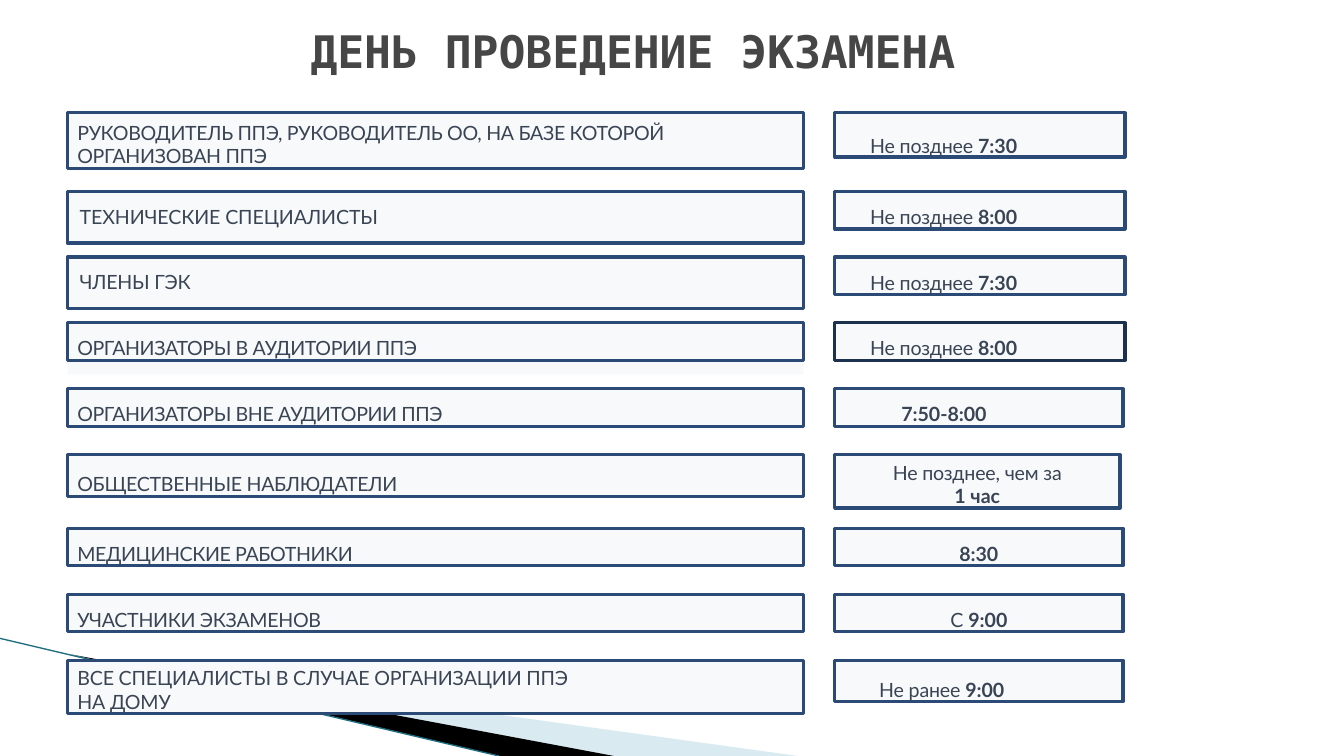
import pptx
import pptx.util
import pptx.dml.color
import pptx.enum.shapes
import pptx.enum.text
from pptx.oxml import parse_xml
from lxml import etree

Pt = pptx.util.Pt
Align = pptx.enum.text.PP_ALIGN
Anchor = pptx.enum.text.MSO_ANCHOR

NAVY, DARK_NAVY, PALE, INK = "2B4A76", "1C314E", "F8F9FA", "394454"
ROLE_LEFT, ROLE_WIDTH, TIME_LEFT = 48.2, 525.6, 596.2
ROW_TOPS = (80.6, 136.8, 183.6, 230.6, 277.7, 324.9, 377.3, 424.6, 471.6)

# text, height, left inset, top inset, letter spacing
ROLES = (
    ("РУКОВОДИТЕЛЬ ППЭ, РУКОВОДИТЕЛЬ ОО, НА БАЗЕ КОТОРОЙ ОРГАНИЗОВАН ППЭ", 39.6, 7.2, 5.6, -0.25),
    ("ТЕХНИЧЕСКИЕ СПЕЦИАЛИСТЫ", 36.8, 8.8, 9.4, -0.1),
    ("ЧЛЕНЫ ГЭК", 36.8, 8.8, 9.4, -0.2),
    ("ОРГАНИЗАТОРЫ В АУДИТОРИИ ППЭ", 26.8, 7.2, 9.6, -0.3),
    ("ОРГАНИЗАТОРЫ ВНЕ АУДИТОРИИ ППЭ", 26.8, 7.2, 9.6, -0.3),
    ("ОБЩЕСТВЕННЫЕ НАБЛЮДАТЕЛИ", 29.6, 7.2, 12.4, -0.25),
    ("МЕДИЦИНСКИЕ РАБОТНИКИ", 26.8, 7.2, 9.6, -0.3),
    ("УЧАСТНИКИ ЭКЗАМЕНОВ", 26.8, 7.2, 9.6, -0.25),
    ("ВСЕ СПЕЦИАЛИСТЫ В СЛУЧАЕ ОРГАНИЗАЦИИ ППЭ\nНА ДОМУ", 38, 7.2, 4.2, -0.15),
)

# plain text, bold text, width, height, left inset, top inset, alignment
TIMES = (
    ("Не позднее ", "7:30", 207.4, 31.6, 25.4, 15.4, Align.LEFT),
    ("Не позднее ", "8:00", 207.4, 26.8, 25.4, 9.6, Align.LEFT),
    ("Не позднее ", "7:30", 207.4, 26.8, 25.4, 9.6, Align.LEFT),
    ("Не позднее ", "8:00", 207.4, 26.8, 25.4, 9.6, Align.LEFT),
    ("", "7:50-8:00", 206, 26.8, 47.6, 9.6, Align.LEFT),
    ("Не позднее, чем за\n", "1 час", 203.8, 38, 0, 4.2, Align.CENTER),
    ("", "8:30", 206, 26.8, 0, 9.6, Align.CENTER),
    ("С ", "9:00", 206, 26.8, 0, 9.6, Align.CENTER),
    ("Не ранее ", "9:00", 206, 29.6, 31.8, 12.4, Align.LEFT),
)


def rgb(hex_color):
    """Turn a hex string into a colour."""
    return pptx.dml.color.RGBColor.from_string(hex_color)


def write(frame, text, size=14, font="Lato", color=INK, bold=False, spacing=0, align=Align.LEFT):
    """Append formatted text to a frame, with a new paragraph at each line break."""
    for number, line in enumerate(text.split("\n")):
        paragraph = frame.add_paragraph() if number else frame.paragraphs[-1]
        paragraph.alignment = align
        if not line:
            continue
        run = paragraph.add_run()
        run.text = line
        run.font.size = Pt(size)
        run.font.name = font
        run.font.bold = bold
        run.font.color.rgb = rgb(color)
        run.font._element.set("spc", str(round(spacing * 100)))


def set_frame(frame, left=0, top=0, anchor=Anchor.TOP):
    """Set the wrapping, insets and anchor of a text frame."""
    frame.word_wrap = True
    frame.auto_size = pptx.enum.text.MSO_AUTO_SIZE.NONE
    frame.vertical_anchor = anchor
    frame.margin_left, frame.margin_top = Pt(left), Pt(top)
    frame.margin_right = frame.margin_bottom = 0


def add_box(slide, left, top, width, height, line=None):
    """Add a pale rectangle, outlined when a line colour is given."""
    box = slide.shapes.add_shape(pptx.enum.shapes.MSO_SHAPE.RECTANGLE,
                                 Pt(left), Pt(top), Pt(width), Pt(height))
    box.shadow.inherit = False
    box.fill.solid()
    box.fill.fore_color.rgb = rgb(PALE)
    if line:
        box.line.color.rgb = rgb(line)
        box.line.width = Pt(2.25)
    else:
        box.line.fill.background()
    return box


def add_wedge(slide, corners, color):
    """Add a filled corner wedge without an outline."""
    start, *others = [(Pt(x), Pt(y)) for x, y in corners]
    builder = slide.shapes.build_freeform(*start)
    builder.add_line_segments(others, close=True)
    wedge = builder.convert_to_shape()
    wedge.shadow.inherit = False
    wedge.fill.solid()
    wedge.fill.fore_color.rgb = rgb(color)
    wedge.line.fill.background()


def add_corner(slide):
    """Add the sweeping decoration of the lower left corner."""
    add_wedge(slide, ((52.5, 468.5), (570, 540), (437.5, 540)), "D9EAF1")
    add_wedge(slide, ((51, 467.5), (438.5, 540), (357, 540)), "000000")
    edge = slide.shapes.add_connector(pptx.enum.shapes.MSO_CONNECTOR.STRAIGHT,
                                      0, Pt(456), Pt(356.5), Pt(540))
    edge.line.color.rgb = rgb("1F6E80")
    edge.line.width = Pt(0.95)
    properties = edge._element.spPr
    etree.SubElement(properties, pptx.oxml.ns.qn("a:effectLst"))


def add_title(slide, text):
    """Place and format the slide title."""
    title = slide.shapes.title
    title.left, title.top, title.width, title.height = Pt(38), Pt(16.6), Pt(828), Pt(39.6)
    set_frame(title.text_frame, anchor=Anchor.MIDDLE)
    write(title.text_frame, text, size=32, font="DejaVu Sans Mono", color="464646",
          bold=True, spacing=-0.1, align=Align.CENTER)


def add_role(slide, row_top, text, height, left, top, spacing):
    """Add the box that names who arrives."""
    box = add_box(slide, ROLE_LEFT, row_top, ROLE_WIDTH, height, NAVY)
    set_frame(box.text_frame, left, top)
    box.text_frame.margin_right = Pt(36)
    write(box.text_frame, text, spacing=spacing)


def add_time(slide, row_top, line, plain, bold, width, height, left, top, align):
    """Add the box that tells the arrival time."""
    box = add_box(slide, TIME_LEFT, row_top, width, height, line)
    set_frame(box.text_frame, left, top)
    write(box.text_frame, plain, spacing=-0.15, align=align)
    write(box.text_frame, bold, bold=True, spacing=-0.05, align=align)


def main():
    """Build and save the exam day slide."""
    deck = pptx.Presentation()
    deck.slide_width, deck.slide_height = Pt(960), Pt(540)
    slide = deck.slides.add_slide(deck.slide_layouts[5])
    add_corner(slide)
    add_title(slide, "ДЕНЬ ПРОВЕДЕНИЕ ЭКЗАМЕНА")
    add_box(slide, ROLE_LEFT, ROW_TOPS[3], ROLE_WIDTH, 36.8)
    for number, (row_top, role, time) in enumerate(zip(ROW_TOPS, ROLES, TIMES)):
        add_role(slide, row_top, *role)
        add_time(slide, row_top, DARK_NAVY if number == 3 else NAVY, *time)
    deck.save("out.pptx")


if __name__ == "__main__":
    main()
